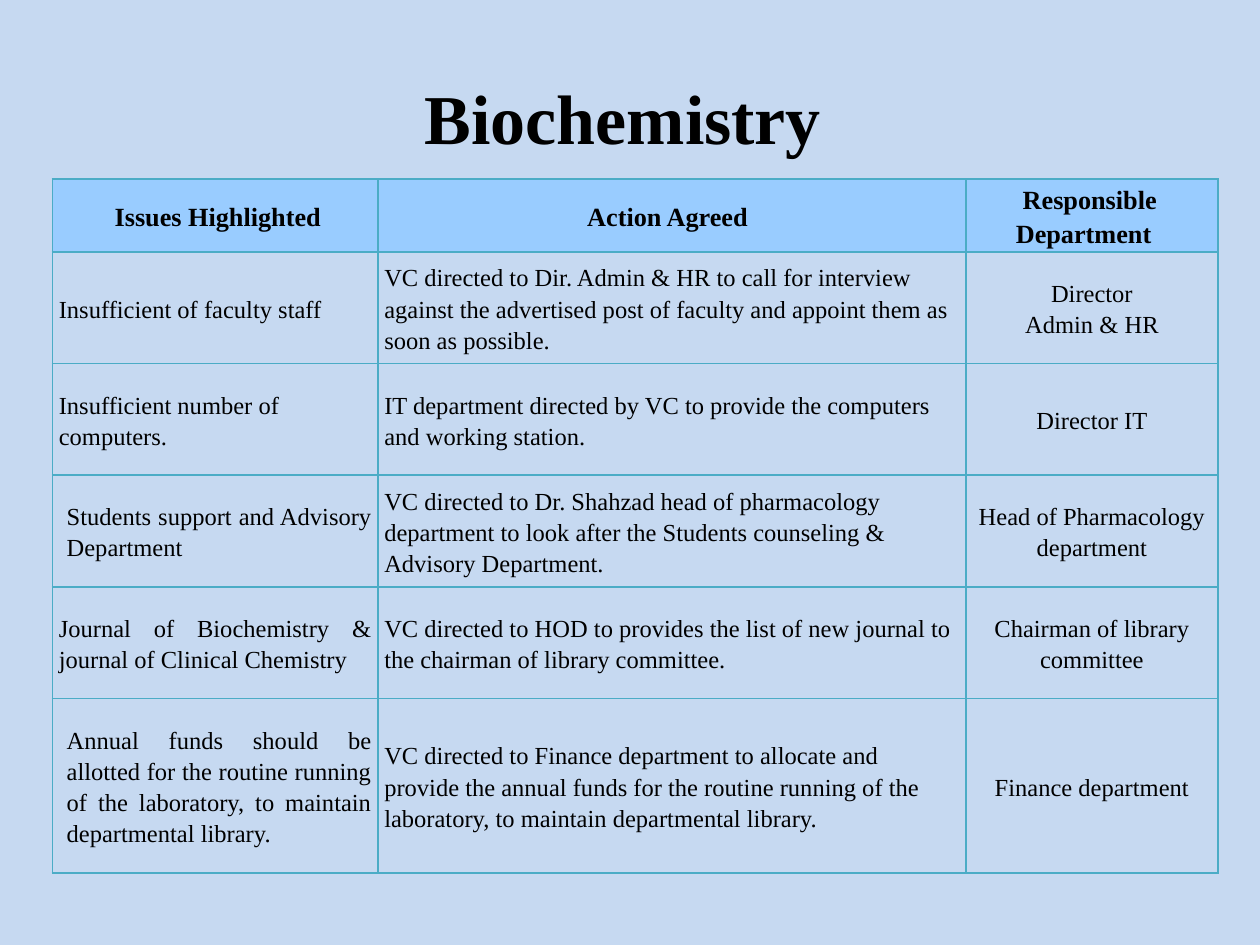
from lxml import etree
from pptx import Presentation
from pptx import util as u
from pptx.dml import color
from pptx.enum import text
from pptx.oxml import ns

COLORS = {"page": "C6D9F1", "header": "99CCFF", "border": "4BACC6", "text": "000000"}
FONT = "Times New Roman"
ALIGN = {"l": text.PP_ALIGN.LEFT, "c": text.PP_ALIGN.CENTER, "j": text.PP_ALIGN.JUSTIFY}


def add_span(para, words, size, bold):
    span = para.add_run()
    span.text = words
    for name, value in {"name": FONT, "size": u.Pt(size), "bold": bold}.items():
        setattr(span.font, name, value)
    span.font.color.rgb = color.RGBColor.from_string(COLORS["text"])
    return span


def add_borders(cell):
    props = cell._tc.get_or_add_tcPr()
    for position, side in enumerate(("lnL", "lnR", "lnT", "lnB")):
        line = etree.Element(ns.qn(f"a:{side}"), w=str(u.Pt(1)))
        fill = etree.SubElement(line, ns.qn("a:solidFill"))
        etree.SubElement(fill, ns.qn("a:srgbClr"), val=COLORS["border"])
        props.insert(position, line)


deck = Presentation()
deck.slide_width, deck.slide_height = u.Pt(720), u.Pt(540)
page = deck.slides.add_slide(deck.slide_layouts[5])
page.background.fill.solid()
page.background.fill.fore_color.rgb = color.RGBColor.from_string(COLORS["page"])

title = page.shapes.title
for name, value in {"left": 36, "top": 21.6, "width": 648, "height": 90}.items():
    setattr(title, name, u.Pt(value))
title.text_frame.vertical_anchor = text.MSO_ANCHOR.MIDDLE
heading = title.text_frame.paragraphs[0]
heading.alignment = ALIGN["c"]
add_span(heading, "Biochemistry", 40, True)
add_span(heading, " ", 32, True)

headers = [
    [("Issues Highlighted", 30, 27, 0)],
    [("Action Agreed", 23, 28, 0)],
    [("Responsible", 19.5, 22, 4.2), ("Department", 14.5, 24, 0)],
]
rows = [
    ("Insufficient of faculty staff", "l", 0, 0,
     "VC directed to Dir. Admin & HR to call for interview against the advertised post "
     "of faculty and appoint them as soon as possible.",
     ["Director", "Admin & HR"]),
    ("Insufficient number of computers.", "l", 0, 0,
     "IT department directed by VC to provide the computers and working station.",
     ["Director IT"]),
    ("Students support and Advisory Department", "j", 4.5, 0.8,
     "VC directed to Dr. Shahzad head of pharmacology department to look after the "
     "Students counseling & Advisory Department.",
     ["Head of Pharmacology department"]),
    ("Journal of Biochemistry & journal of Clinical Chemistry", "j", 0, 0.8,
     "VC directed to HOD to provides the list of new journal to the chairman of "
     "library committee.",
     ["Chairman of library committee"]),
    ("Annual funds should be allotted for the routine running of the laboratory, "
     "to maintain departmental library.", "j", 4.5, 0.5,
     "VC directed to Finance department to allocate and provide the annual funds for the "
     "routine running of the laboratory, to maintain departmental library.",
     ["Finance department"]),
]

grid = [[[(words, "c", left, right, before) for words, left, right, before in cell]
         for cell in headers]]
for issue, align, indent, before, action, owners in rows:
    grid.append([
        [(issue, align, indent, 0, before)],
        [(action, "l", 0, 0, 0)],
        [(owner, "c", 0, 0, 0) for owner in owners],
    ])

widths = [186, 336, 144]
heights = [41.8, 63.8, 63.8, 63.8, 63.8, 99.8]
frame = page.shapes.add_table(len(heights), len(widths), u.Pt(30), u.Pt(102.2),
                              u.Pt(sum(widths)), u.Pt(sum(heights)))
table = frame.table
table.first_row = table.horz_banding = False
for column, width in zip(table.columns, widths):
    column.width = u.Pt(width)
for row, height in zip(table.rows, heights):
    row.height = u.Pt(height)

cell_format = {
    "margin_left": u.Pt(3.6), "margin_right": u.Pt(3.6),
    "margin_top": 0, "margin_bottom": 0,
    "vertical_anchor": text.MSO_ANCHOR.MIDDLE,
}
for row_index, row in enumerate(grid):
    is_header = row_index == 0
    for column_index, lines in enumerate(row):
        cell = table.cell(row_index, column_index)
        for name, value in cell_format.items():
            setattr(cell, name, value)
        if is_header:
            cell.fill.solid()
            cell.fill.fore_color.rgb = color.RGBColor.from_string(COLORS["header"])
        else:
            cell.fill.background()
        add_borders(cell)
        for line_index, (words, align, left, right, before) in enumerate(lines):
            body = cell.text_frame
            para = body.add_paragraph() if line_index else body.paragraphs[0]
            para_format = {"alignment": ALIGN[align], "line_spacing": 1.15,
                           "space_before": u.Pt(before)}
            for name, value in para_format.items():
                setattr(para, name, value)
            props = para._p.get_or_add_pPr()
            for name, value in {"marL": left, "marR": right, "indent": 0}.items():
                props.set(name, str(u.Pt(value)))
            add_span(para, words, 15 if is_header else 14, is_header)

deck.save("out.pptx")
